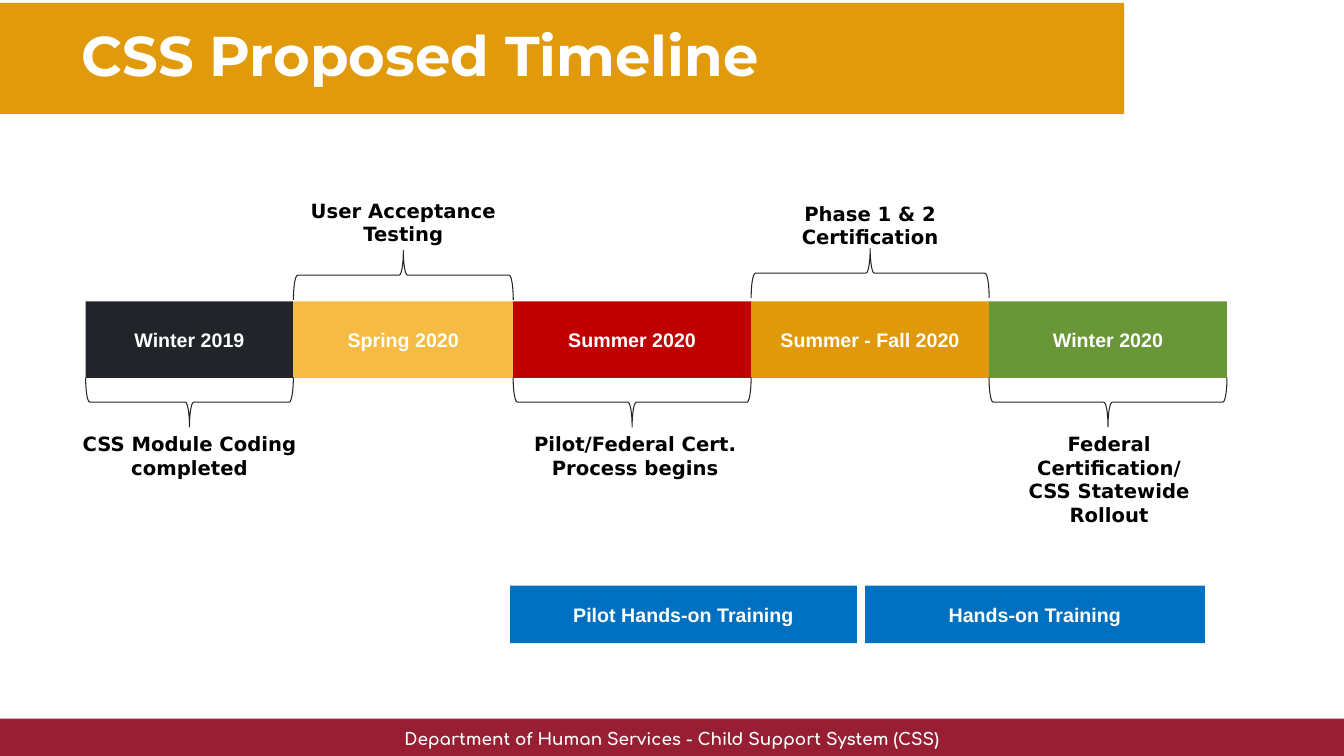
from pptx import Presentation
from pptx.dml.color import RGBColor
from pptx.enum.shapes import MSO_SHAPE as Shape
from pptx.enum.text import MSO_ANCHOR as Anchor, PP_ALIGN as Align
from pptx.util import Inches, Pt

WHITE = RGBColor(0xFF, 0xFF, 0xFF)
BLACK = RGBColor(0, 0, 0)
DARK = RGBColor(0x21, 0x25, 0x2A)
GOLD = RGBColor(0xE0, 0x9A, 0x0B)
AMBER = RGBColor(0xE0, 0x99, 0x0A)
YELLOW = RGBColor(0xF6, 0xBB, 0x43)
RED = RGBColor(0xC0, 0, 0)
GREEN = RGBColor(0x69, 0x96, 0x36)
BLUE = RGBColor(0, 0x70, 0xC0)
WINE = RGBColor(0x98, 0x1E, 0x33)

WIDE, HIGH = 13.33, 7.5
BAR_TOP, BAR_HIGH = 2.99, 0.76
BRACE = 0.49

PHASES = [
    ("Winter 2019", 2.06, DARK),
    ("Spring 2020", 2.18, YELLOW),
    ("Summer 2020", 2.36, RED),
    ("Summer - Fall 2020", 2.36, AMBER),
    ("Winter 2020", 2.36, GREEN),
]
BRACES = [(0, 270, 3.99), (2, 270, 3.99), (4, 270, 3.99), (1, 90, 2.73), (3, 90, 2.71)]
LABELS = [
    (0.71, 4.24, 2.34, ["CSS Module Coding completed"]),
    (2.91, 1.92, 2.18, ["User Acceptance Testing"]),
    (5.02, 4.24, 2.56, ["Pilot/Federal Cert. Process begins"]),
    (7.29, 1.95, 2.68, ["Phase 1 & 2 Certification"]),
    (9.91, 4.24, 2.18, ["Federal Certification/", "CSS Statewide Rollout"]),
]
COURSES = [(5.06, 3.44, "Pilot Hands-on Training"), (8.58, 3.37, "Hands-on Training")]


class Board:
    def __init__(self, slide):
        self.shapes = slide.shapes

    def letter(self, frame, lines, face, size, color, align=Align.CENTER):
        frame.word_wrap = True
        for i, line in enumerate(lines):
            para = frame.paragraphs[0] if i == 0 else frame.add_paragraph()
            para.text = line
            para.alignment = align
            para.font.name = face
            para.font.size = Pt(size)
            para.font.bold = True
            para.font.color.rgb = color

    def block(self, x, y, w, h, fill, text=None):
        box = self.shapes.add_shape(Shape.RECTANGLE, Inches(x), Inches(y), Inches(w), Inches(h))
        box.shadow.inherit = False
        box.fill.solid()
        box.fill.fore_color.rgb = fill
        box.line.fill.background()
        if text:
            box.text_frame.vertical_anchor = Anchor.MIDDLE
            self.letter(box.text_frame, [text], "Arial", 14, WHITE)

    def label(self, x, y, w, h, lines, face="DejaVu Sans", size=14, color=BLACK, align=Align.CENTER):
        box = self.shapes.add_textbox(Inches(x), Inches(y), Inches(w), Inches(h))
        self.letter(box.text_frame, lines, face, size, color, align)
        return box.text_frame

    def brace(self, mid, level, span, turn):
        mark = self.shapes.add_shape(
            Shape.LEFT_BRACE, Inches(mid - BRACE / 2), Inches(level - span / 2), Inches(BRACE), Inches(span)
        )
        mark.rotation = turn
        mark.shadow.inherit = False
        mark.fill.background()
        mark.line.color.rgb = DARK
        mark.line.width = Pt(0.75)


def main():
    deck = Presentation()
    deck.slide_width, deck.slide_height = Inches(WIDE), Inches(HIGH)
    board = Board(deck.slides.add_slide(deck.slide_layouts[6]))

    board.block(0, 0.03, 11.15, 1.1, GOLD)
    title = board.label(
        0.71, 0.23, 10.75, 0.75, ["CSS Proposed Timeline"], "Montserrat", 40, WHITE, Align.LEFT
    )
    title.paragraphs[0].line_spacing = 0.9

    board.block(0, 7.13, WIDE, 0.37, WINE)
    foot = board.label(
        0, 7.13, WIDE, 0.37, ["Department of Human Services - Child Support System (CSS)"],
        "Comfortaa", 12, WHITE,
    )
    foot.margin_top = foot.margin_bottom = Inches(0.1)

    left = 0.85
    mids = []
    for text, span, fill in PHASES:
        board.block(left, BAR_TOP, span, BAR_HIGH, fill, text)
        mids.append(left + span / 2)
        left += span

    for i, turn, level in BRACES:
        board.brace(mids[i], level, PHASES[i][1], turn)
    for x, y, w, lines in LABELS:
        board.label(x, y, w, 0.57, lines)
    for x, w, text in COURSES:
        board.block(x, 5.81, w, 0.57, BLUE, text)

    deck.save("out.pptx")


if __name__ == "__main__":
    main()
